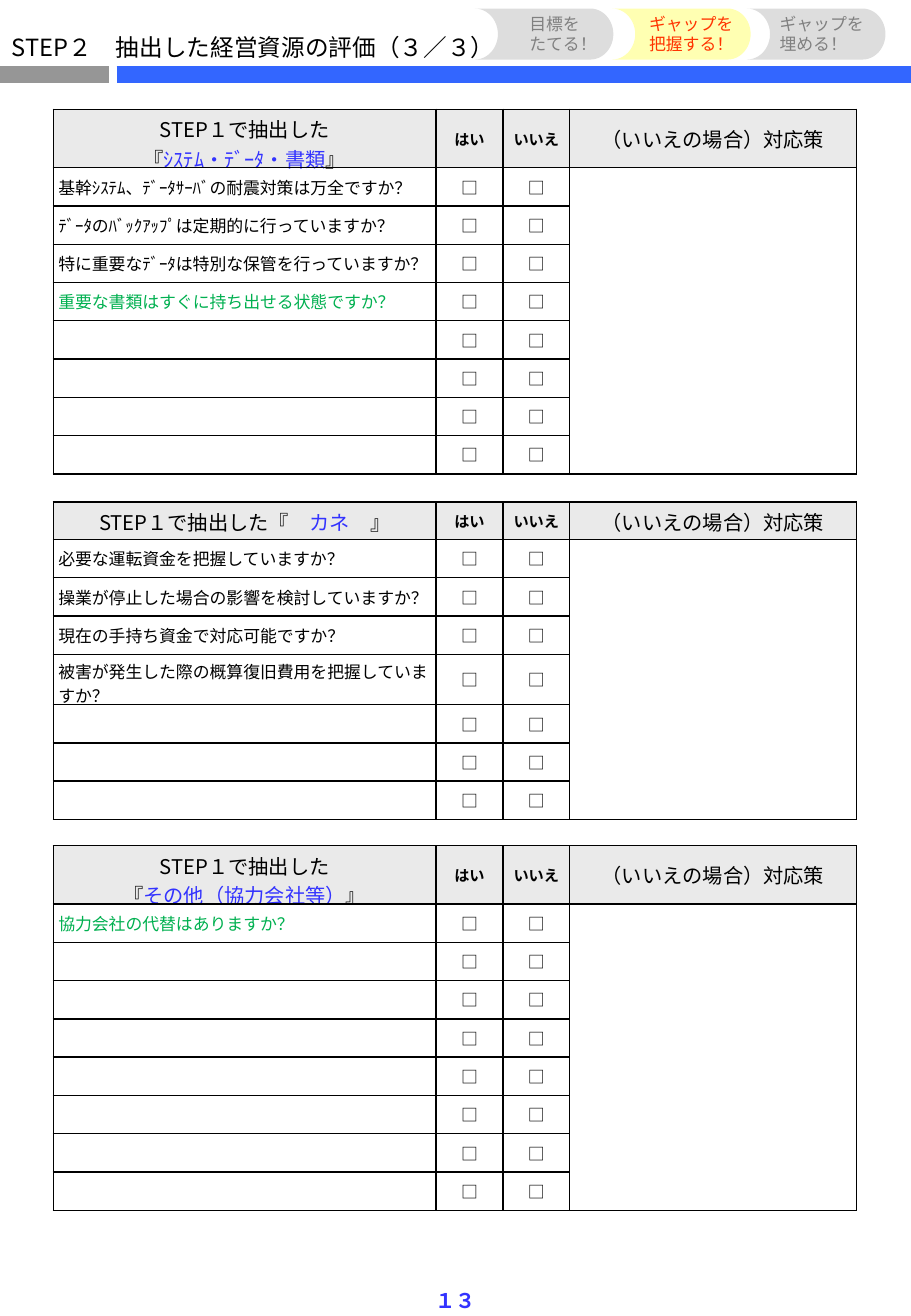
from lxml import etree
from pptx import Presentation
from pptx.dml.color import RGBColor
from pptx.enum.shapes import MSO_CONNECTOR, MSO_SHAPE
from pptx.enum.text import MSO_ANCHOR, PP_ALIGN
from pptx.oxml.ns import qn
from pptx.util import Inches, Pt

FONT = "Noto Sans CJK JP"
BLACK = RGBColor(0x00, 0x00, 0x00)
GRAY = RGBColor(0x80, 0x80, 0x80)
SILVER = RGBColor(0x96, 0x96, 0x96)
PALE = RGBColor(0xDD, 0xDD, 0xDD)
YELLOW = RGBColor(0xFF, 0xFF, 0xB2)
RED = RGBColor(0xFF, 0x33, 0x00)
BLUE = RGBColor(0x33, 0x66, 0xFF)
INDIGO = RGBColor(0x33, 0x33, 0xFF)
GREEN = RGBColor(0x00, 0xB0, 0x50)
HEAD = RGBColor(0xEA, 0xEA, 0xEA)

LEFT, CENTER = PP_ALIGN.LEFT, PP_ALIGN.CENTER
MIDDLE = MSO_ANCHOR.MIDDLE
STRAIGHT = MSO_CONNECTOR.STRAIGHT
TAB = MSO_SHAPE.FLOWCHART_STORED_DATA

COLS = (3.15, 0.55, 0.55, 2.36)
ROW = 0.315

# Top, header height, title parts, questions with colours, row count
TABLES = (
    (0.9, 0.48, ("STEP１で抽出した\v『", "ｼｽﾃﾑ・ﾃﾞｰﾀ・書類", "』"),
     (("基幹ｼｽﾃﾑ、ﾃﾞｰﾀｻｰﾊﾞの耐震対策は万全ですか？", BLACK),
      ("ﾃﾞｰﾀのﾊﾞｯｸｱｯﾌﾟは定期的に行っていますか？", BLACK),
      ("特に重要なﾃﾞｰﾀは特別な保管を行っていますか？", BLACK),
      ("重要な書類はすぐに持ち出せる状態ですか？", GREEN)), 8),
    (4.13, 0.31, ("STEP１で抽出した『　", "カネ　", "』"),
     (("必要な運転資金を把握していますか？", BLACK),
      ("操業が停止した場合の影響を検討していますか？", BLACK),
      ("現在の手持ち資金で対応可能ですか？", BLACK),
      ("被害が発生した際の概算復旧費用を把握していますか？", BLACK)), 7),
    (6.96, 0.48, ("STEP１で抽出した\v『", "その他（協力会社等）", "』"),
     (("協力会社の代替はありますか？", GREEN),), 8),
)

# Tab left, fill, text left, text width, lines, text colour, alignment
STEPS = (
    (6.15, PALE, 6.32, 0.9, ("ギャップを", "埋める！"), GRAY, LEFT),
    (5.04, YELLOW, 5.24, 0.9, ("ギャップを", "把握する！"), RED, CENTER),
    (3.91, PALE, 4.26, 0.76, ("目標を", "たてる！"), GRAY, LEFT),
)


def style(para, size, color, align=LEFT, bold=False):
    para.alignment = align
    font = para.font
    font.name, font.size, font.bold = FONT, Pt(size), bold
    font.color.rgb = color
    props = para._p.get_or_add_pPr().find(qn("a:defRPr"))
    etree.SubElement(props, qn("a:ea"), typeface=FONT)


def add_text(slide, box, lines, size, color, align=LEFT, bold=False, wrap=False):
    frame = slide.shapes.add_textbox(*map(Inches, box)).text_frame
    frame.word_wrap = wrap
    frame.text = "\n".join(lines)
    for para in frame.paragraphs:
        style(para, size, color, align, bold)


def add_rule(slide, start, end, color):
    y = Inches(0.61)
    rule = slide.shapes.add_connector(STRAIGHT, Inches(start), y, Inches(end), y)
    rule.line.color.rgb = color
    rule.line.width = Pt(10)
    etree.SubElement(rule._element.spPr, qn("a:effectLst"))


def add_tab(slide, left, color):
    tab = slide.shapes.add_shape(
        TAB, Inches(left), Inches(0.07), Inches(1.14), Inches(0.42))
    tab.shadow.inherit = False
    tab.fill.solid()
    tab.fill.fore_color.rgb = color
    tab.line.fill.background()
    tab._element.spPr.find(qn("a:xfrm")).set("flipH", "1")


def frame_cell(cell, fill=None):
    props = cell._tc.get_or_add_tcPr()
    for side in ("lnL", "lnR", "lnT", "lnB"):
        line = etree.SubElement(props, qn(f"a:{side}"), w=str(Pt(1)))
        solid = etree.SubElement(line, qn("a:solidFill"))
        etree.SubElement(solid, qn("a:srgbClr"), val=str(BLACK))
    if fill is None:
        cell.fill.background()
    else:
        cell.fill.solid()
        cell.fill.fore_color.rgb = fill
    cell.vertical_anchor = MIDDLE
    cell.margin_left = cell.margin_right = Inches(0.04)
    cell.margin_top = cell.margin_bottom = Inches(0.04)


def fill_cell(cell, text, size, color=BLACK, align=CENTER, bold=False):
    para = cell.text_frame.paragraphs[0]
    if text:
        para.text = text
    style(para, size, color, align, bold)
    space = etree.Element(qn("a:spcBef"))
    etree.SubElement(space, qn("a:spcPct"), val="20000")
    para._p.get_or_add_pPr().insert(0, space)
    if not text:
        etree.SubElement(para._p, qn("a:endParaRPr"), sz=str(size * 100))


def fill_title(cell, parts):
    before, topic, after = parts
    fill_cell(cell, before, 12)
    para = cell.text_frame.paragraphs[0]
    run = para.add_run()
    run.text = topic
    run.font.color.rgb = INDIGO
    para.add_run().text = after


def add_check(slide, top, head, title, asks, count):
    shape = slide.shapes.add_table(
        count + 1, len(COLS), Inches(0.44), Inches(top),
        Inches(sum(COLS)), Inches(head + count * ROW))
    table = shape.table
    table.first_row = table.horz_banding = False
    for col, width in zip(table.columns, COLS):
        col.width = Inches(width)
    for i, row in enumerate(table.rows):
        row.height = Inches(ROW if i else head)
        for cell in row.cells:
            frame_cell(cell, None if i else HEAD)

    # Header row
    fill_title(table.cell(0, 0), title)
    fill_cell(table.cell(0, 1), "はい", 9, bold=True)
    fill_cell(table.cell(0, 2), "いいえ", 9, bold=True)
    fill_cell(table.cell(0, 3), "（いいえの場合）対応策", 12)

    # Questions and boxes to tick
    for i in range(count):
        text, color = asks[i] if i < len(asks) else ("", BLACK)
        fill_cell(table.cell(i + 1, 0), text, 10, color, LEFT)
        for col in (1, 2):
            fill_cell(table.cell(i + 1, col), "□", 10)
        fill_cell(table.cell(i + 1, 3), "", 10)
    table.cell(1, 3).merge(table.cell(count, 3))


def main():
    deck = Presentation()
    deck.slide_width, deck.slide_height = Inches(7.5), Inches(10.83)
    slide = deck.slides.add_slide(deck.slide_layouts[6])

    # Heading and page number
    add_rule(slide, 0, 0.9, SILVER)
    add_rule(slide, 0.96, 7.5, BLUE)
    add_text(slide, (0, 0.22, 4.25, 0.34),
             ("STEP２　抽出した経営資源の評価（３／３）",), 14, BLACK, wrap=True)
    add_text(slide, (3.48, 10.55, 0.54, 0.31), ("１３",), 12, INDIGO, CENTER, True)

    # Step tabs, right to left so that each overlaps the next
    for left, fill, *_ in STEPS:
        add_tab(slide, left, fill)
    for _, _, left, width, lines, color, align in STEPS:
        add_text(slide, (left, 0.06, width, 0.44), lines, 10, color, align)

    # Check tables
    for check in TABLES:
        add_check(slide, *check)

    deck.save("out.pptx")


if __name__ == "__main__":
    main()
